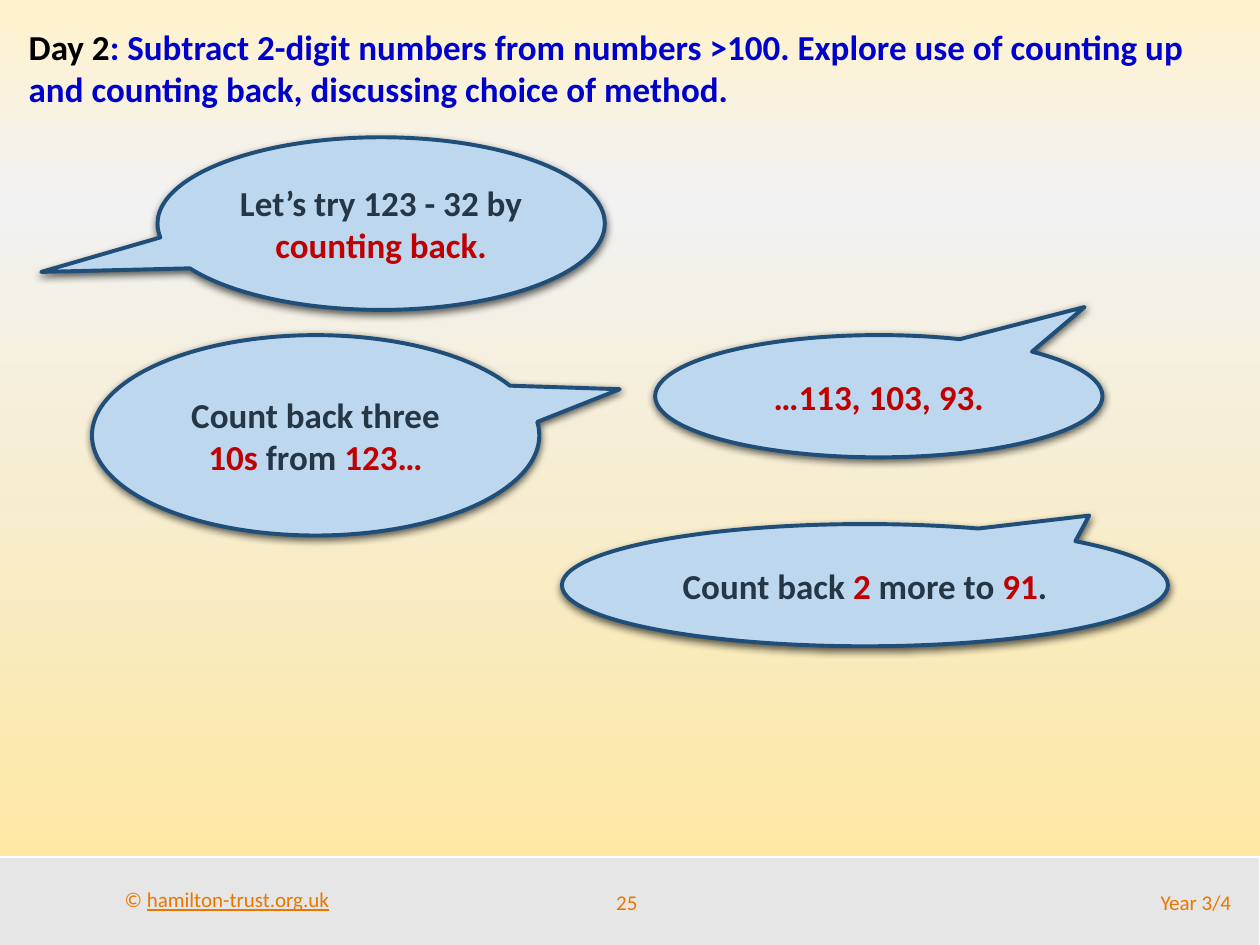
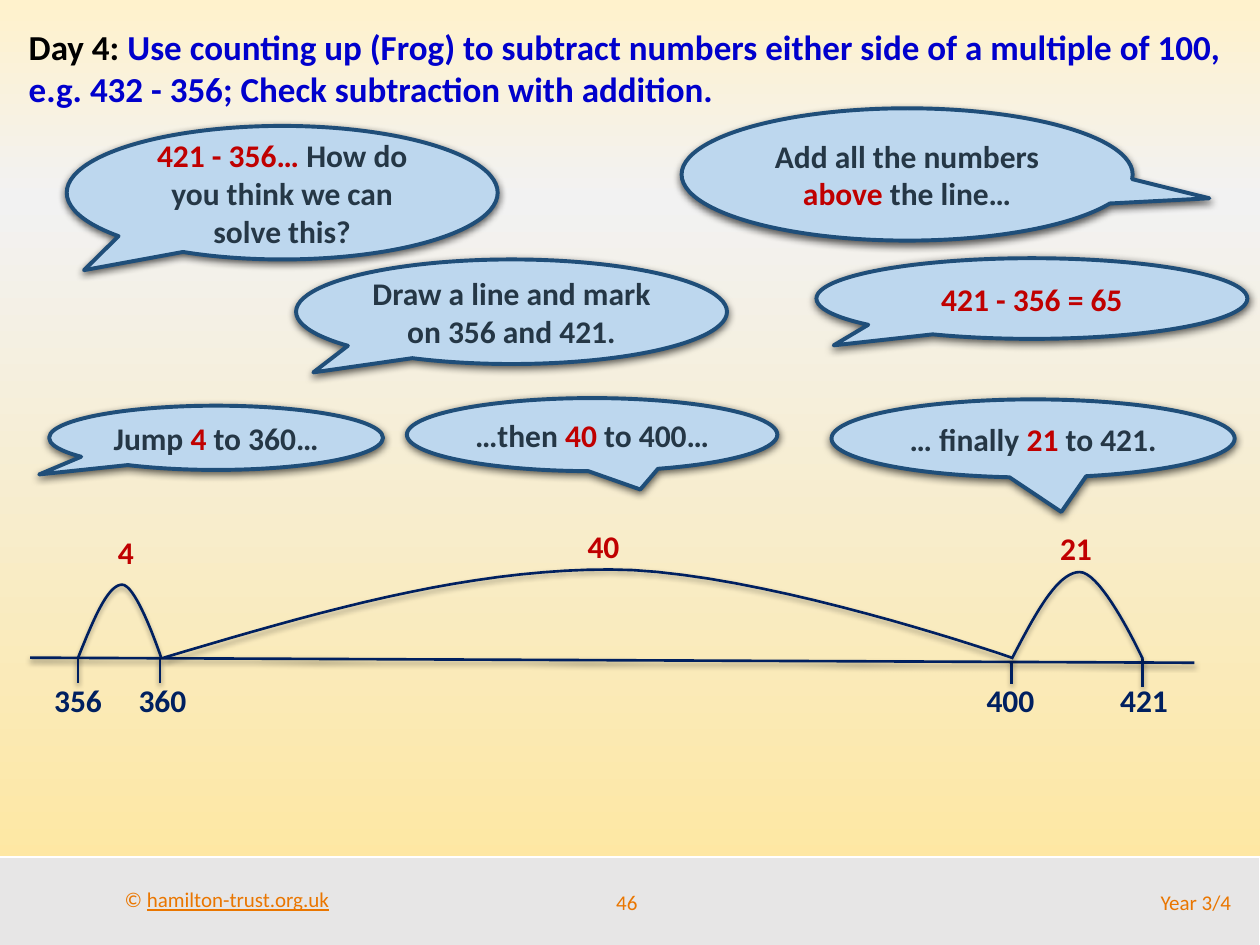
import pptx
import pptx.util
from dataclasses import dataclass
from lxml import etree
from pptx.dml.color import RGBColor
from pptx.enum.shapes import MSO_CONNECTOR, MSO_SHAPE
from pptx.enum.text import MSO_ANCHOR, PP_ALIGN
from pptx.oxml.ns import qn

PX = 9144  # EMU in one px, 100 px to the inch


@dataclass(frozen=True)
class Theme:
    font: str = "Calibri"
    title_size: int = 20
    number_size: int = 18
    footer_size: int = 12
    day: str = "000000"
    aim: str = "0000CC"
    speech: str = "253746"
    accent: str = "C00000"
    bubble: str = "BDD7EE"
    bubble_line: str = "1F4E79"
    navy: str = "002060"
    band: str = "E7E6E6"
    band_line: str = "FFFFFF"
    footer: str = "EA7600"
    background: tuple = ((0, "FFF2CC"), (21, "F2F2F2"), (100, "FFE699"))
    # Shadows: opacity in percent, blur and distance in points
    bubble_shadow: tuple = (63, 4.5, 1.5)
    line_shadow: tuple = (38, 3.1, 1.6)
    hop_shadow: tuple = (35, 3.1, 1.8)


T = Theme()


# Helpers
def px(*lengths):
    return [pptx.util.Emu(round(n * PX)) for n in lengths]


def rgb(colour):
    return RGBColor.from_string(colour)


def set_line(shape, colour, width):
    shape.line.color.rgb = rgb(colour)
    shape.line.width = pptx.util.Pt(width)


def add_shadow(shape, opacity, blur, distance):
    effects = etree.SubElement(shape._element.spPr, qn("a:effectLst"))
    outer = etree.SubElement(
        effects, qn("a:outerShdw"), blurRad=str(pptx.util.Pt(blur)),
        dist=str(pptx.util.Pt(distance)), dir="5400000", rotWithShape="0")
    colour = etree.SubElement(outer, qn("a:srgbClr"), val="000000")
    etree.SubElement(colour, qn("a:alpha"), val=str(opacity * 1000))


def write(tf, runs, size, bold=True, align=PP_ALIGN.CENTER, anchor=MSO_ANCHOR.TOP):
    """Fill a text frame with one paragraph of (text, colour) runs."""
    tf.word_wrap = True
    tf.vertical_anchor = anchor
    p = tf.paragraphs[0]
    p.alignment = align
    for text, colour in runs:
        r = p.add_run()
        r.text = text
        r.font.name = T.font
        r.font.size = pptx.util.Pt(size)
        r.font.bold = bold
        r.font.color.rgb = rgb(colour)
    return p


def add_text(s, box, runs, size, **style):
    return write(s.shapes.add_textbox(*px(*box)).text_frame, runs, size, **style)


# Parts that every slide has
def add_background(s):
    fill = s.background.fill
    fill.gradient()
    fill.gradient_angle = 270
    stops = s._element.find(".//" + qn("a:gsLst"))
    for stop in list(stops):
        stops.remove(stop)
    for position, colour in T.background:
        stop = etree.SubElement(stops, qn("a:gs"), pos=str(position * 1000))
        etree.SubElement(stop, qn("a:srgbClr"), val=colour)


def add_footer(s, box, page):
    x, y, w, h = box
    band = s.shapes.add_shape(MSO_SHAPE.RECTANGLE, *px(*box))
    band.fill.solid()
    band.fill.fore_color.rgb = rgb(T.band)
    set_line(band, T.band_line, 1)
    band.shadow.inherit = False

    p = add_text(s, (x + 95, y + 19, 200, 30),
                 [("© ", T.footer), ("hamilton-trust.org.uk", T.footer)],
                 T.footer_size, bold=False, align=PP_ALIGN.LEFT)
    p.runs[1].font.underline = True
    add_text(s, (x + 464, y + 16, 79, 40), [(str(page), T.footer)],
             T.footer_size, bold=False, anchor=MSO_ANCHOR.MIDDLE)
    add_text(s, (x + 656, y + 16, 337, 40), [("Year 3/4", T.footer)],
             T.footer_size, bold=False, align=PP_ALIGN.RIGHT, anchor=MSO_ANCHOR.MIDDLE)


def add_lesson_slide(prs, page, day, aim):
    s = prs.slides.add_slide(prs.slide_layouts[6])
    add_background(s)
    add_footer(s, (-6, 680, 1006, 72), page)
    add_text(s, (13, 15, 977, 77), [(day, T.day), (aim, T.aim)],
             T.title_size, align=PP_ALIGN.LEFT)
    return s


# Speech bubble: words between asterisks take the accent colour
def add_bubble(s, box, tail, words, size):
    sp = s.shapes.add_shape(MSO_SHAPE.OVAL_CALLOUT, *px(*box))
    sp.adjustments[0], sp.adjustments[1] = tail
    sp.fill.solid()
    sp.fill.fore_color.rgb = rgb(T.bubble)
    set_line(sp, T.bubble_line, 2.25)
    add_shadow(sp, *T.bubble_shadow)
    runs = [(text, (T.speech, T.accent)[i % 2])
            for i, text in enumerate(words.split("*")) if text]
    write(sp.text_frame, runs, size, anchor=MSO_ANCHOR.MIDDLE)


# Number line with frog hops
def add_stroke(s, x1, y1, x2, y2):
    line = s.shapes.add_connector(MSO_CONNECTOR.STRAIGHT, *px(x1, y1, x2, y2))
    set_line(line, T.navy, 1.5)
    add_shadow(line, *T.line_shadow)


def add_number(s, centre, y, number, colour):
    add_text(s, (centre - 35, y, 70, 40), [(number, colour)], T.number_size)


def bezier(points, steps=20):
    """Points along a cubic curve, after its start."""
    for i in range(1, steps + 1):
        t = i / steps
        weights = (1 - t) ** 3, 3 * t * (1 - t) ** 2, 3 * t * t * (1 - t), t ** 3
        yield tuple(sum(k * pt[axis] for k, pt in zip(weights, points))
                    for axis in (0, 1))


def add_hop(s, start, end, apex, top, base):
    step = (apex - start) / 3
    rise = [(start, base), (start + step, (base + top) / 2),
            (start + 2 * step, top), (apex, top)]
    fall = [(apex, top), (apex + step, top), (end, base), (end, base)]
    builder = s.shapes.build_freeform(*px(start, base))
    builder.add_line_segments([px(*pt) for half in (rise, fall) for pt in bezier(half)],
                              close=False)
    hop = builder.convert_to_shape()
    hop.fill.background()
    set_line(hop, T.navy, 1.5)
    add_shadow(hop, *T.hop_shadow)


def add_number_line(s, box):
    x, y, w, h = box
    add_stroke(s, x, y + 109, x + w, y + 113)
    # Tick, its top and bottom, the centre of its number
    for tick, top, bottom, centre, number in (
            (38, 110, 129, 38, "356"), (103, 110, 129, 105, "360"),
            (779, 112, 130, 778, "400"), (883, 110, 132, 884, "421")):
        add_stroke(s, x + tick, y + top, x + tick, y + bottom)
        add_number(s, x + centre, y + h - 40, number, T.navy)
    # Hop from start to end, then the place of its number
    for start, end, apex, top, base, centre, above, number in (
            (38, 104, 73, 51, 109, 76, 5, "4"),
            (106, 779, 460, 39, 109, 455, 0, "40"),
            (779, 883, 833, 41, 110, 830, 2, "21")):
        add_hop(s, x + start, x + end, x + apex, y + top, y + base)
        add_number(s, x + centre, y + above, number, T.accent)


# Slides
def add_counting_back(prs):
    s = add_lesson_slide(
        prs, 25, "Day 2", ": Subtract 2-digit numbers from numbers >100. Explore use of "
        "counting up and counting back, discussing choice of method.")
    for box, tail, words in (
            ((125, 109, 355, 137), (-0.76, 0.28), "Let’s try 123 - 32 by *counting back.*"),
            ((73, 266, 355, 159), (0.68, -0.23), "Count back three *10s* from *123…*"),
            ((520, 266, 355, 97), (0.46, -0.73), "*…113, 103, 93.*"),
            ((446, 416, 481, 97), (0.37, -0.57), "Count back *2* more to *91*.")):
        add_bubble(s, box, tail, words, 20)


def add_counting_up(prs):
    s = add_lesson_slide(
        prs, 46, "Day 4: ", "Use counting up (Frog) to subtract numbers either side of a "
        "multiple of 100, e.g. 432 - 356; Check subtraction with addition.")
    add_number_line(s, (24, 413, 924, 163))
    lower_left = (-0.46, 0.58)
    for box, tail, words in (
            ((323, 316, 294, 58), (0.13, 0.75), "…then *40* to 400…"),
            ((541, 86, 358, 105), (0.67, 0.18), "Add all the numbers *above *the line…"),
            ((53, 100, 342, 106), lower_left,
             "*421 - 356… *How do you think we can solve this?"),
            ((660, 317, 320, 62), (0.07, 0.94), "… finally *21* to 421."),
            ((39, 322, 265, 51), (-0.53, 0.57), "Jump *4 *to 360…"),
            ((235, 206, 342, 83), lower_left, "Draw a line and mark on 356 and 421."),
            ((648, 205, 342, 64), lower_left, "*421 - 356 = 65*")):
        add_bubble(s, box, tail, words, 18)


def main():
    prs = pptx.Presentation()
    prs.slide_width, prs.slide_height = px(1000, 750)
    add_counting_back(prs)
    add_counting_up(prs)
    prs.save("out.pptx")


if __name__ == "__main__":
    main()
